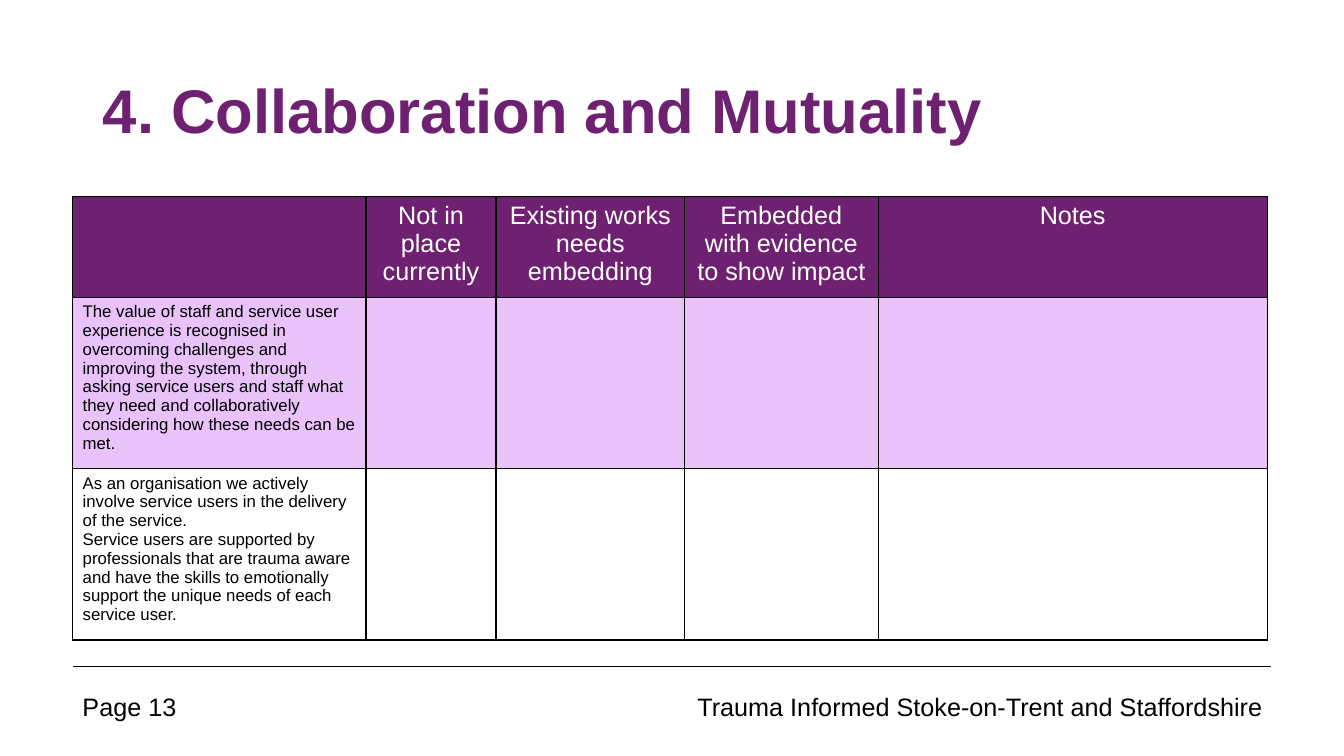
from lxml import etree
from pptx import Presentation
from pptx.dml.color import RGBColor
from pptx.enum import shapes, text
from pptx.oxml import ns
from pptx.util import Pt

PX = 9144  # 100 px to the inch
PLUM = RGBColor(0x6F, 0x21, 0x71)
LILAC = RGBColor(0xEA, 0xC2, 0xFA)
WHITE = RGBColor(0xFF, 0xFF, 0xFF)
BLACK = RGBColor(0, 0, 0)
LEFT, CENTER, RIGHT = text.PP_ALIGN.LEFT, text.PP_ALIGN.CENTER, text.PP_ALIGN.RIGHT


def write(frame, words, size, color, align=LEFT, bold=False):
    frame.text = words
    for para in frame.paragraphs:
        para.alignment = align
        for run in para.runs:
            run.font.name = "Arial"
            run.font.size = Pt(size)
            run.font.bold = bold
            run.font.color.rgb = color


def border(cell):
    """Draw a thin black line on all four sides of a cell."""
    props = cell._tc.get_or_add_tcPr()
    for spot, side in enumerate(("a:lnL", "a:lnR", "a:lnT", "a:lnB")):
        line = etree.Element(ns.qn(side), w=str(Pt(1)))
        fill = etree.SubElement(line, ns.qn("a:solidFill"))
        etree.SubElement(fill, ns.qn("a:srgbClr"), val=str(BLACK))
        props.insert(spot, line)


deck = Presentation()
deck.slide_width, deck.slide_height = 1333 * PX, 750 * PX
slide = deck.slides.add_slide(deck.slide_layouts[5])

# Title
title = slide.shapes.title
title.left, title.top, title.width, title.height = 92 * PX, 40 * PX, 1150 * PX, 145 * PX
write(title.text_frame, "4. Collaboration and Mutuality", 44, PLUM, bold=True)
title.text_frame.vertical_anchor = text.MSO_ANCHOR.MIDDLE
title.text_frame.paragraphs[0].line_spacing = 0.9

# Table
HEADS = ["", "Not in place currently", "Existing works needs embedding",
         "Embedded with evidence to show impact", "Notes"]
VALUE = ("The value of staff and service user experience is recognised in "
         "overcoming challenges and improving the system, through asking service "
         "users and staff what they need and collaboratively considering how "
         "these needs can be met.")
INVOLVE = ("As an organisation we actively involve service users in the delivery "
           "of the service.\n"
           "Service users are supported by professionals that are trauma aware "
           "and have the skills to emotionally support the unique needs of each "
           "service user.")
COLS = [291, 129, 187, 192, 386]
ROWS = [  # height, fill, font size, font colour, alignment, words
    (100, PLUM, 18, WHITE, CENTER, HEADS),
    (170, LILAC, 12, BLACK, LEFT, [VALUE]),
    (170, WHITE, 12, BLACK, LEFT, [INVOLVE]),
]
table = slide.shapes.add_table(len(ROWS), len(COLS), 72 * PX, 195 * PX,
                               sum(COLS) * PX, 440 * PX).table
for col, width in zip(table.columns, COLS):
    col.width = width * PX
for row, (height, fill, size, color, align, words) in zip(table.rows, ROWS):
    row.height = height * PX
    for cell in row.cells:
        cell.fill.solid()
        cell.fill.fore_color.rgb = fill
        border(cell)
    for cell, word in zip(row.cells, words):
        write(cell.text_frame, word, size, color, align)

# Footer
rule = slide.shapes.add_connector(shapes.MSO_CONNECTOR.STRAIGHT,
                                  72 * PX, 661 * PX, 1261 * PX, 661 * PX)
rule.line.color.rgb = BLACK
rule.line.width = Pt(0.5)
etree.SubElement(rule._element.spPr, ns.qn("a:effectLst"))

FOOT = [
    (72, 120, LEFT, "Page 13"),
    (676, 586, RIGHT, "Trauma Informed Stoke-on-Trent and Staffordshire"),
]
for left, width, align, words in FOOT:
    box = slide.shapes.add_textbox(left * PX, 681 * PX, width * PX, 40 * PX)
    box.text_frame.word_wrap = True
    write(box.text_frame, words, 18, BLACK, align)

deck.save("out.pptx")
